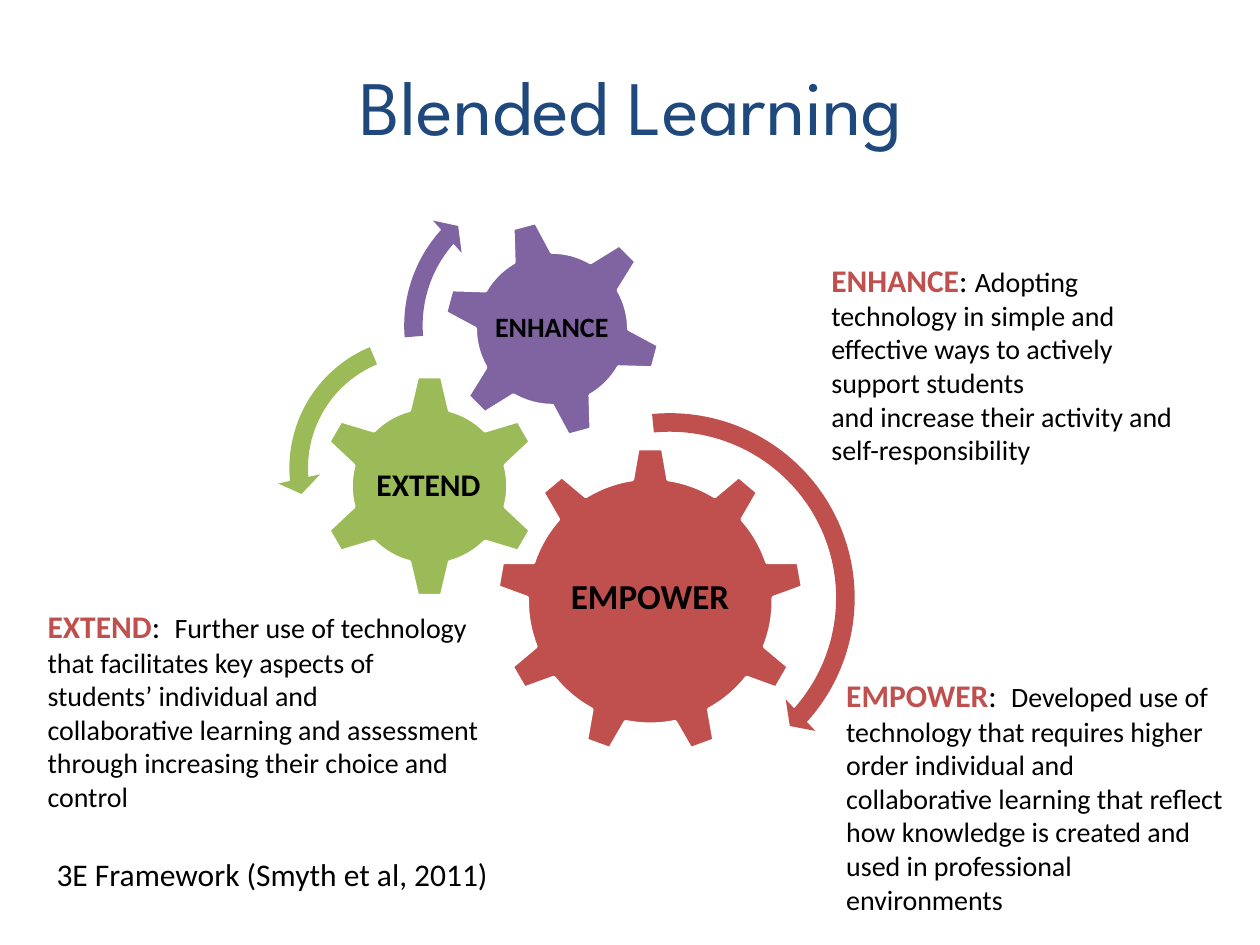
"""Build the Blended Learning slide with the three gears of the 3E framework."""
from dataclasses import dataclass

from pptx import Presentation
from pptx import util as u
from pptx.dml.color import RGBColor
from pptx.enum import shapes, text

COLORS = {
    "title": "1F497D",
    "text": "000000",
    "outline": "FFFFFF",
    "empower": "C0504D",
    "extend": "9BBB59",
    "enhance": "8064A2",
}
KIND = shapes.MSO_SHAPE
BODY_FONT = "Calibri"
DEGREE = 0.6


@dataclass(frozen=True)
class Box:
    left: float
    top: float
    width: float
    height: float

    def lengths(self) -> tuple:
        return tuple(u.Cm(n) for n in (self.left, self.top, self.width, self.height))


@dataclass(frozen=True)
class Gear:
    kind: KIND
    color: str
    box: Box
    label: str
    label_box: Box
    size: int
    rotation: float = 0


@dataclass(frozen=True)
class Arrow:
    kind: KIND
    color: str
    box: Box
    thickness: float
    head_angle: float
    end_angle: float
    start_angle: float
    head_width: float


@dataclass(frozen=True)
class Note:
    box: Box
    heading: str
    separator: str
    lines: tuple


GEARS = (
    Gear(KIND.GEAR_9, "empower", Box(10.01, 9.02, 6.2, 6.2),
         "EMPOWER", Box(11.25, 10.46, 3.71, 3.2), 20),
    Gear(KIND.GEAR_6, "extend", Box(6.4, 7.54, 4.52, 4.52),
         "EXTEND", Box(7.44, 8.69, 2.4, 2.24), 18),
    Gear(KIND.GEAR_6, "enhance", Box(8.92, 4.42, 4.42, 4.42),
         "ENHANCE", Box(9.88, 5.38, 2.49, 2.49), 16, 345),
)
ARROWS = (
    Arrow(KIND.CIRCULAR_ARROW, "empower", Box(9.53, 8.08, 7.95, 7.95),
          4.7, 4.98, 41.89, 264.47, 5.5),
    Arrow(KIND.LEFT_CIRCULAR_ARROW, "extend", Box(5.59, 6.55, 5.77, 5.77),
          6.5, 7.17, 174.82, 247.3, 7.5),
    Arrow(KIND.CIRCULAR_ARROW, "enhance", Box(7.9, 3.45, 6.22, 6.22),
          6, 6.57, 221.9, 175.14, 7),
)
NOTES = (
    Note(Box(16.51, 5.13, 8, 4.45), "ENHANCE", ": ", (
        "Adopting technology in simple and effective ways to actively support students",
        "and increase their activity and self-responsibility")),
    Note(Box(0.71, 12.12, 9.19, 4.45), "EXTEND", ":  ", (
        "Further use of technology that facilitates key aspects of students’ individual and",
        "collaborative learning and assessment through increasing their choice and control")),
    Note(Box(16.81, 13.51, 8.1, 5.13), "EMPOWER", ":  ", (
        "Developed use of technology that requires higher order individual and",
        "collaborative learning that reflect how knowledge is created and used in professional",
        "environments")),
)


def add_span(para, words: str, size: int, color: str = "text",
             bold: bool = False, font: str = BODY_FONT) -> None:
    span = para.add_run()
    span.text = words
    span.font.name = font
    span.font.size = u.Pt(size)
    span.font.bold = bold
    span.font.color.rgb = RGBColor.from_string(COLORS[color])


def add_text_frame(parent, box: Box, anchor=text.MSO_ANCHOR.TOP):
    frame = parent.add_textbox(*box.lengths()).text_frame
    frame.word_wrap = True
    frame.vertical_anchor = anchor
    return frame


def add_filled_shape(parent, item):
    shape = parent.add_shape(item.kind, *item.box.lengths())
    shape.shadow.inherit = False
    shape.fill.solid()
    shape.fill.fore_color.rgb = RGBColor.from_string(COLORS[item.color])
    return shape


def add_gear(parent, gear: Gear) -> None:
    shape = add_filled_shape(parent, gear)
    shape.rotation = gear.rotation
    shape.line.color.rgb = RGBColor.from_string(COLORS["outline"])
    shape.line.width = u.Pt(2)
    frame = add_text_frame(parent, gear.label_box, text.MSO_ANCHOR.MIDDLE)
    frame.margin_left = frame.margin_right = u.Cm(0.05)
    frame.margin_top = frame.margin_bottom = u.Cm(0.05)
    para = frame.paragraphs[0]
    para.alignment = text.PP_ALIGN.CENTER
    para.line_spacing = 0.9
    add_span(para, gear.label, gear.size, bold=True)


def add_arrow(parent, arrow: Arrow) -> None:
    shape = add_filled_shape(parent, arrow)
    shape.line.fill.background()
    values = (arrow.thickness / 100, arrow.head_angle * DEGREE, arrow.end_angle * DEGREE,
              arrow.start_angle * DEGREE, arrow.head_width / 100)
    for index, value in enumerate(values):
        shape.adjustments[index] = value


def add_note(parent, note: Note) -> None:
    frame = add_text_frame(parent, note.box)
    frame.auto_size = text.MSO_AUTO_SIZE.SHAPE_TO_FIT_TEXT
    para = frame.paragraphs[0]
    add_span(para, note.heading, 18, "empower", bold=True)
    add_span(para, note.separator, 18)
    add_span(para, note.lines[0], 16)
    for line in note.lines[1:]:
        add_span(frame.add_paragraph(), line, 16)


def add_title(page) -> None:
    title = page.shapes.title
    title.left, title.top, title.width, title.height = Box(1.3, 0.53, 22.86, 3.18).lengths()
    title.text_frame.vertical_anchor = text.MSO_ANCHOR.MIDDLE
    para = title.text_frame.paragraphs[0]
    para.alignment = text.PP_ALIGN.CENTER
    add_span(para, "Blended Learning", 44, "title", font="League Spartan")


def main() -> None:
    deck = Presentation()
    deck.slide_width, deck.slide_height = u.Cm(25.4), u.Cm(19.05)
    page = deck.slides.add_slide(deck.slide_layouts[5])
    add_title(page)
    source = add_text_frame(page.shapes, Box(0.89, 16.94, 9.4, 1.37), text.MSO_ANCHOR.MIDDLE)
    add_span(source.paragraphs[0], "3E Framework (Smyth et al, 2011)", 18)
    diagram = page.shapes.add_group_shape().shapes
    for gear in GEARS:
        add_gear(diagram, gear)
    for arrow in ARROWS:
        add_arrow(diagram, arrow)
    for note in NOTES:
        add_note(page.shapes, note)
    deck.save("out.pptx")


if __name__ == "__main__":
    main()
